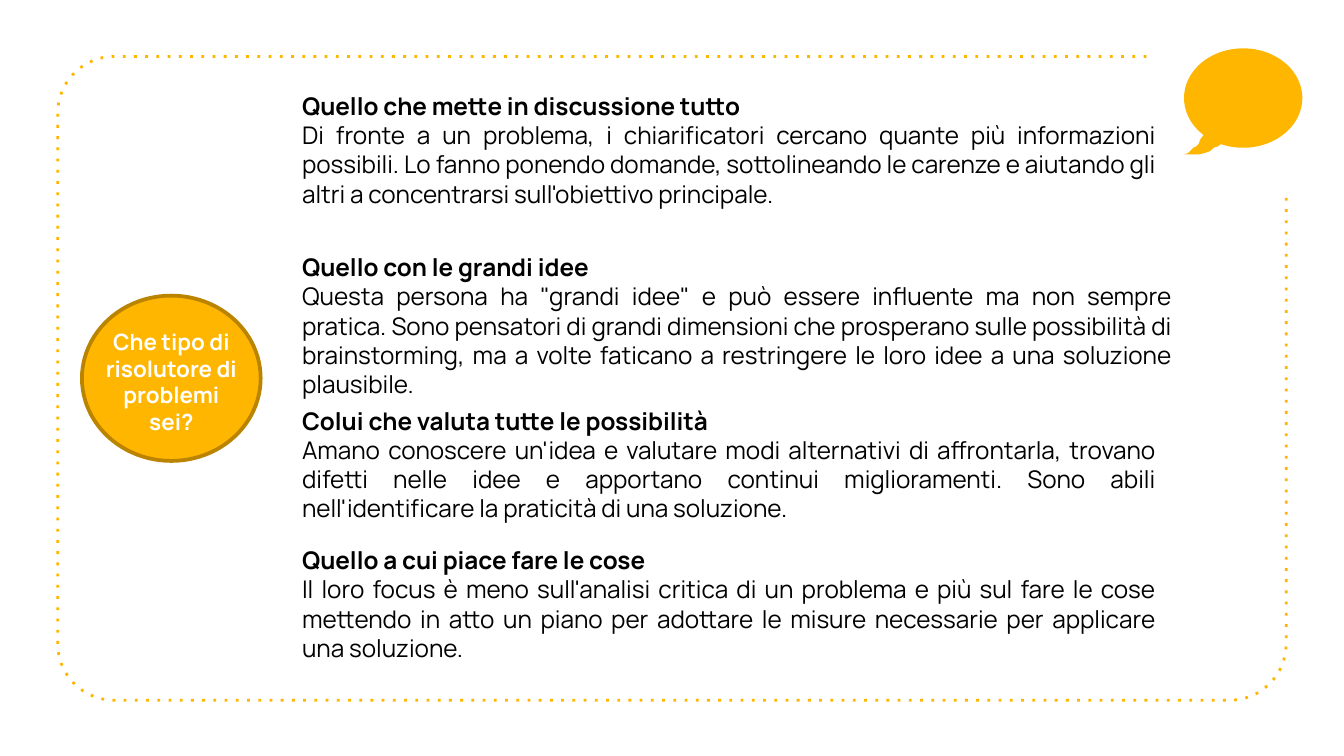
import math
import pptx
import pptx.util
import pptx.dml.color
import pptx.enum.dml
import pptx.enum.shapes
import pptx.enum.text
import pptx.oxml.ns

Inches = pptx.util.Inches
Pt = pptx.util.Pt
RGB = pptx.dml.color.RGBColor
ALIGN = pptx.enum.text.PP_ALIGN

GOLD = RGB(0xFF, 0xB6, 0x00)
BROWN = RGB(0xBA, 0x84, 0x00)
WHITE = RGB(0xFF, 0xFF, 0xFF)
BLACK = RGB(0x00, 0x00, 0x00)
FONT = "Manrope"

# Content: top, width, height, heading, body
TITLE = "Che tipo di risolutore di problemi sei?"
TYPES = [
    (0.63, 6.54, 0.98, "Quello che mette in discussione tutto",
     "Di fronte a un problema, i chiarificatori cercano quante più informazioni "
     "possibili. Lo fanno ponendo domande, sottolineando le carenze e aiutando gli "
     "altri a concentrarsi sull'obiettivo principale. "),
    (1.83, 6.66, 1.19, "Quello con le grandi idee",
     'Questa persona ha "grandi idee" e può essere influente ma non sempre '
     "pratica. Sono pensatori di grandi dimensioni che prosperano sulle possibilità "
     "di brainstorming, ma a volte faticano a restringere le loro idee a una "
     "soluzione plausibile."),
    (2.97, 6.54, 0.98, "Colui che valuta tutte le possibilità",
     "Amano conoscere un'idea e valutare modi alternativi di affrontarla, trovano "
     "difetti nelle idee e apportano continui miglioramenti. Sono abili "
     "nell'identificare la praticità di una soluzione."),
    (4.01, 6.54, 0.98, "Quello a cui piace fare le cose",
     "Il loro focus è meno sull'analisi critica di un problema e più sul fare le "
     "cose mettendo in atto un piano per adottare le misure necessarie per "
     "applicare una soluzione."),
]
TAIL = [(9.06, 1.09), (9.03, 1.1), (9.01, 1.12), (8.99, 1.13), (8.96, 1.14),
        (8.92, 1.15), (8.88, 1.15), (8.81, 1.15), (8.84, 1.14), (8.86, 1.12),
        (8.88, 1.1), (8.9, 1.09), (8.92, 1.07), (8.93, 1.04)]

deck = pptx.Presentation()
deck.slide_width = Inches(10)
deck.slide_height = deck.slide_width * 9 // 16
slide = deck.slides.add_slide(deck.slide_layouts[6])
shapes = slide.shapes


def arc(x, y, rx, ry, start, end, steps):
    """Points on an ellipse, with angles in degrees and y pointing down."""
    turns = [math.radians(start + (end - start) * i / steps)
             for i in range(steps + 1)]
    return [(x + rx * math.cos(t), y + ry * math.sin(t)) for t in turns]


def draw(points, close):
    dots = [(Inches(x), Inches(y)) for x, y in points]
    pen = shapes.build_freeform(*dots[0])
    pen.add_line_segments(dots[1:], close=close)
    form = pen.convert_to_shape()
    form.shadow.inherit = False
    return form


def write(left, top, width, height, lines, size, color, align):
    box = shapes.add_textbox(*map(Inches, (left, top, width, height)))
    frame = box.text_frame
    frame.word_wrap = True
    frame.auto_size = pptx.enum.text.MSO_AUTO_SIZE.SHAPE_TO_FIT_TEXT
    for i, (text, bold) in enumerate(lines):
        para = frame.paragraphs[0] if i == 0 else frame.add_paragraph()
        para.alignment = align
        run = para.add_run()
        run.text = text
        run.font.name = FONT
        run.font.size = Pt(size)
        run.font.bold = bold
        run.font.color.rgb = color


# Dotted frame, open at the top right corner
west, north, east, south, curve = 0.43, 0.42, 9.57, 5.21, 0.42
edge = [(8.53, north)]
for x, y, start in [(west + curve, north + curve, 270),
                    (west + curve, south - curve, 180),
                    (east - curve, south - curve, 90)]:
    edge += arc(x, y, curve, curve, start, start - 90, 16)
edge.append((east, 1.46))
border = draw(edge, False)
border.fill.background()
border.line.color.rgb = GOLD
border.line.width = Pt(1.5)
border.line.dash_style = pptx.enum.dml.MSO_LINE.ROUND_DOT
dash = border.line._ln.find(pptx.oxml.ns.qn("a:prstDash"))
dash.set("val", "dot")

# Speech bubble
bubble = draw(arc(9.25, 0.73, 0.44, 0.37, 132, 472, 80) + TAIL, True)
bubble.fill.solid()
bubble.fill.fore_color.rgb = GOLD
bubble.line.fill.background()

# Question in its circle
oval = shapes.add_shape(pptx.enum.shapes.MSO_SHAPE.OVAL,
                        *map(Inches, (0.61, 2.2, 1.33, 1.23)))
oval.shadow.inherit = False
oval.fill.solid()
oval.fill.fore_color.rgb = GOLD
oval.line.color.rgb = BROWN
oval.line.width = Pt(2)
write(0.67, 2.39, 1.21, 0.91, [(TITLE, True)], 12, WHITE, ALIGN.CENTER)

# The four types
for top, width, height, head, body in TYPES:
    write(2.15, top, width, height, [(head, True), (body, False)],
          13, BLACK, ALIGN.JUSTIFY)

deck.save("out.pptx")
